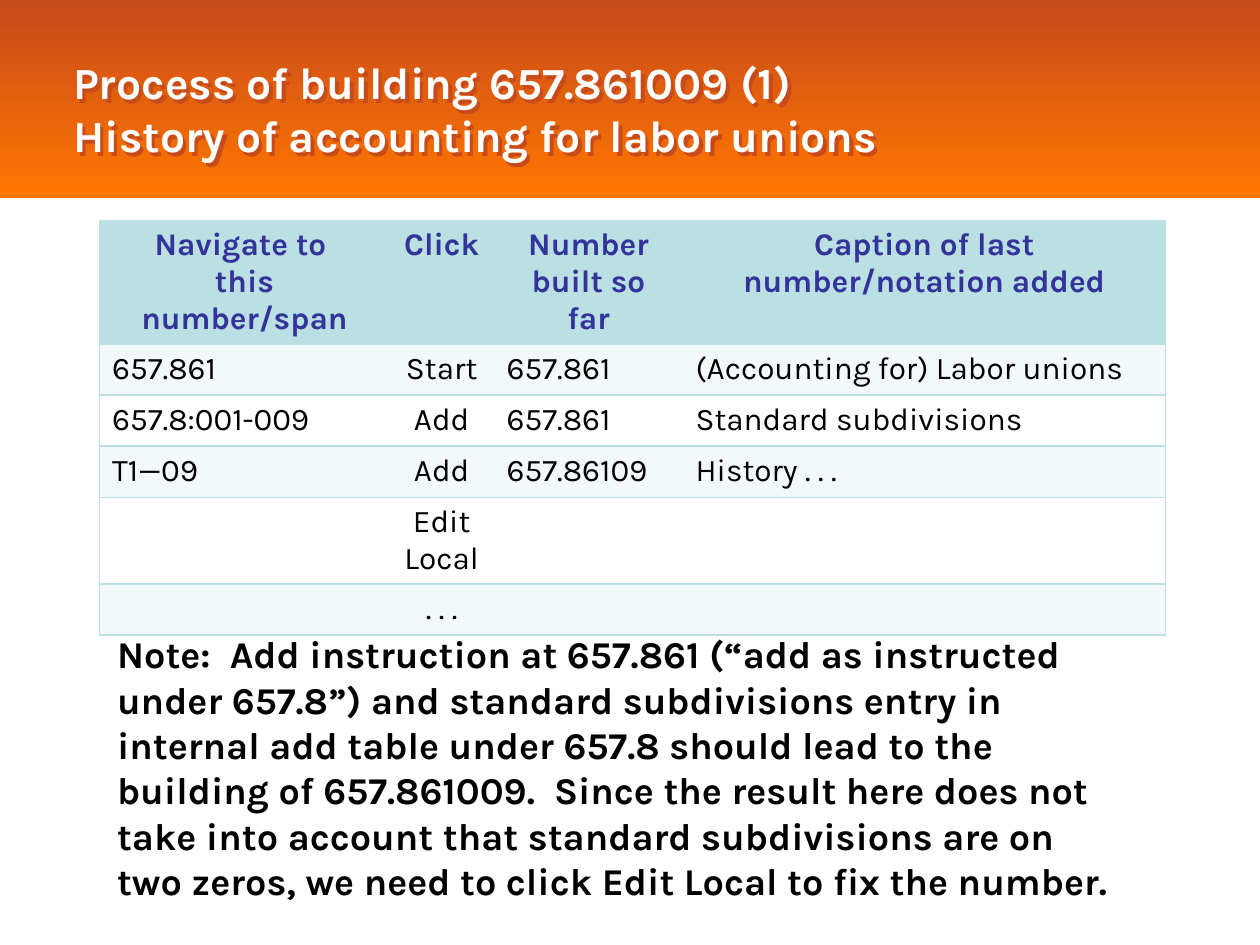
from dataclasses import dataclass

from lxml import etree
from pptx import Presentation
from pptx.dml.color import RGBColor
from pptx.enum.shapes import MSO_SHAPE
from pptx.enum.text import MSO_ANCHOR, PP_ALIGN
from pptx.oxml.ns import qn
from pptx.util import Pt

RECT = MSO_SHAPE.RECTANGLE
MIDDLE = MSO_ANCHOR.MIDDLE
LEFT, CENTER = PP_ALIGN.LEFT, PP_ALIGN.CENTER


@dataclass(frozen=True)
class Theme:
    font: str = "Karla"
    title_size: float = 25.4
    table_size: float = 18
    note_size: float = 21.6
    band_top: str = "C74A1B"
    band_bottom: str = "FF7600"
    white: str = "FFFFFF"
    black: str = "000000"
    heading: str = "333399"
    header_fill: str = "BBE0E3"
    stripe: str = "F3F9FA"


@dataclass(frozen=True)
class Box:
    left: float
    top: float
    width: float
    height: float

    def lengths(self) -> tuple:
        return Pt(self.left), Pt(self.top), Pt(self.width), Pt(self.height)


@dataclass(frozen=True)
class TextStyle:
    size: float
    color: str
    bold: bool
    align: PP_ALIGN = LEFT


THEME = Theme()
BAND = Box(0, 0, 720, 113)
TITLE = Box(34.6, 11.5, 550, 101)
TABLE = Box(56.9, 126, 609.1, 175.2)
NOTE = Box(59.8, 357, 588, 160)
COLUMNS = (165.6, 59.8, 108, 275.7)
COLUMN_ALIGN = (LEFT, CENTER, LEFT, LEFT)

ROWS = (
    ("Navigate to \nthis number/span", "Click", "Number built so far",
     "Caption of last number/notation added"),
    ("657.861", "Start", "657.861", "(Accounting for) Labor unions"),
    ("657.8:001-009", "Add", "657.861", "Standard subdivisions"),
    ("T1—09", "Add", "657.86109", "History . . ."),
    ("", "Edit Local", "", ""),
    ("", ". . .", "", ""),
)
TITLE_TEXT = ("Process of building 657.861009 (1)\v"
              "History of accounting for labor unions")
NOTE_TEXT = (
    "Note:  Add instruction at 657.861 (“add as instructed under 657.8”) and "
    "standard subdivisions entry in internal add table under 657.8 should lead "
    "to the building of 657.861009.  Since the result here does not take into "
    "account that standard subdivisions are on two zeros, we need to click "
    "Edit Local to fix the number."
)


def write(tf, text: str, style: TextStyle) -> None:
    tf.text = text
    tf.word_wrap = True
    values = {"name": THEME.font, "size": Pt(style.size), "bold": style.bold}
    for p in tf.paragraphs:
        p.alignment = style.align
        for font in (p.font, *(r.font for r in p.runs)):
            for name, value in values.items():
                setattr(font, name, value)
            font.color.rgb = RGBColor.from_string(style.color)


def add_color(parent, color: str) -> None:
    fill = etree.SubElement(parent, qn("a:solidFill"))
    etree.SubElement(fill, qn("a:srgbClr"), val=color)


def add_band(slide, title) -> None:
    sp = slide.shapes.add_shape(RECT, *BAND.lengths())
    sp.shadow.inherit = False
    sp.line.fill.background()
    sp.fill.gradient()
    sp.fill.gradient_angle = 270
    colors = (THEME.band_top, THEME.band_bottom)
    for i, (stop, color) in enumerate(zip(sp.fill.gradient_stops, colors)):
        stop.position = i
        stop.color.rgb = RGBColor.from_string(color)
    title.element.addprevious(sp.element)


def format_title(title) -> None:
    title.left, title.top, title.width, title.height = TITLE.lengths()
    write(title.text_frame, TITLE_TEXT,
          TextStyle(THEME.title_size, THEME.white, True))
    title.text_frame.vertical_anchor = MIDDLE
    effects = etree.SubElement(title.element.spPr, qn("a:effectLst"))
    shadow = etree.SubElement(effects, qn("a:outerShdw"), dist=str(Pt(2.8)),
                              dir="2700000", algn="ctr", rotWithShape="0")
    etree.SubElement(shadow, qn("a:srgbClr"), val=THEME.band_top)


def set_borders(cell, first: bool, last: bool) -> None:
    tc_pr = cell._tc.get_or_add_tcPr()
    sides = {"L": first, "R": last, "T": True, "B": True}
    for side, visible in sides.items():
        ln = etree.SubElement(tc_pr, qn(f"a:ln{side}"), w=str(Pt(1)))
        if visible:
            add_color(ln, THEME.header_fill)
        else:
            etree.SubElement(ln, qn("a:noFill"))


def add_number_table(slide) -> None:
    table = slide.shapes.add_table(len(ROWS), len(COLUMNS),
                                   *TABLE.lengths()).table
    table.first_row = table.horz_banding = False
    for column, width in zip(table.columns, COLUMNS):
        column.width = Pt(width)
    header = TextStyle(THEME.table_size, THEME.heading, True, CENTER)
    for i, row in enumerate(ROWS):
        table.rows[i].height = Pt(TABLE.height / len(ROWS))
        fill = THEME.stripe if i % 2 else THEME.white
        for j, text in enumerate(row):
            cell = table.cell(i, j)
            body = TextStyle(THEME.table_size, THEME.black, False,
                             COLUMN_ALIGN[j])
            write(cell.text_frame, text, body if i else header)
            set_borders(cell, j == 0, j == len(COLUMNS) - 1)
            cell.fill.solid()
            cell.fill.fore_color.rgb = RGBColor.from_string(
                fill if i else THEME.header_fill)


def main() -> None:
    prs = Presentation()
    prs.slide_width, prs.slide_height = Pt(720), Pt(540)
    slide = prs.slides.add_slide(prs.slide_layouts[5])
    title = slide.shapes.title
    format_title(title)
    add_band(slide, title)
    add_number_table(slide)
    note = slide.shapes.add_textbox(*NOTE.lengths())
    write(note.text_frame, NOTE_TEXT,
          TextStyle(THEME.note_size, THEME.black, True))
    prs.save("out.pptx")


if __name__ == "__main__":
    main()
